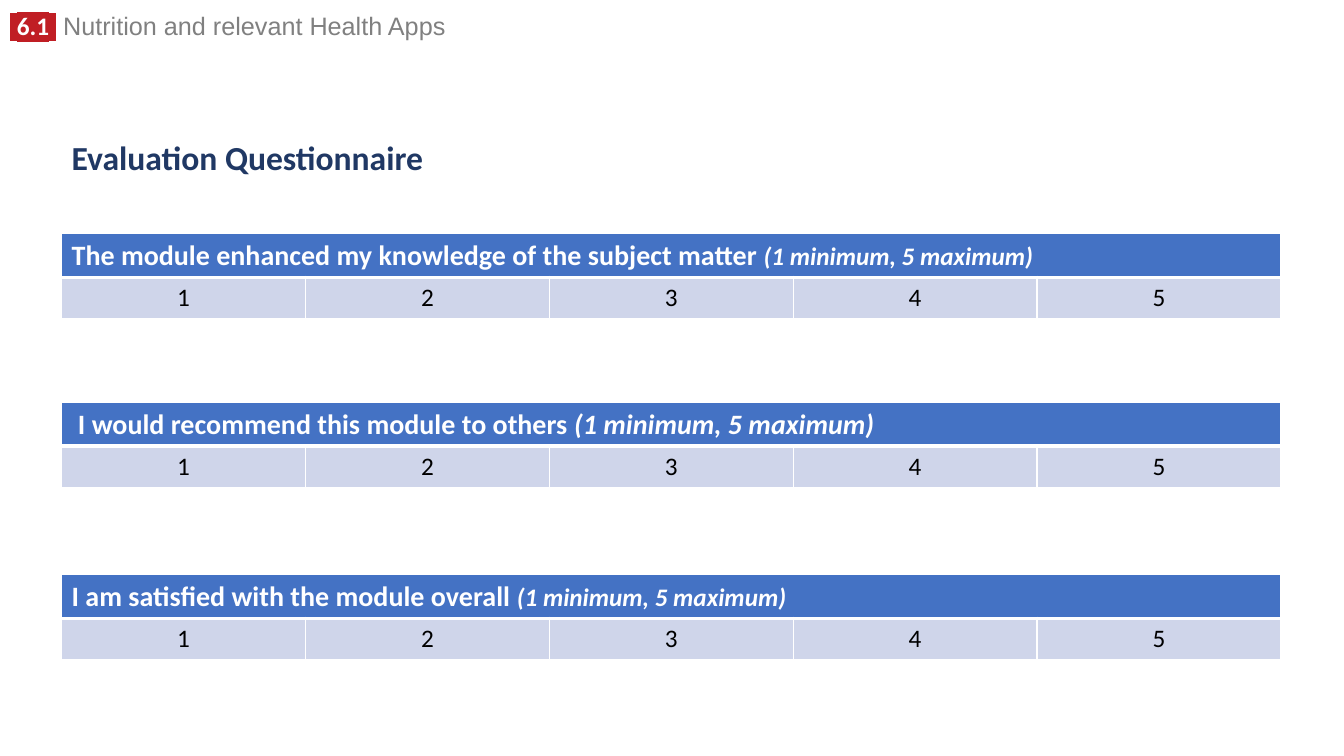
"""Build the evaluation questionnaire slide of the nutrition apps module."""
from dataclasses import dataclass
from typing import Any

from lxml import etree
from pptx import Presentation
from pptx.dml.color import RGBColor
from pptx.enum.text import MSO_ANCHOR, MSO_AUTO_SIZE, PP_ALIGN
from pptx.oxml.ns import qn
from pptx.util import Pt

LEFT, CENTER = PP_ALIGN.LEFT, PP_ALIGN.CENTER
TOP, MIDDLE = MSO_ANCHOR.TOP, MSO_ANCHOR.MIDDLE
FIXED = MSO_AUTO_SIZE.NONE
TITLE_ONLY_LAYOUT = 5


@dataclass(frozen=True)
class Theme:
    white: str = "FFFFFF"
    black: str = "000000"
    grey: str = "808080"
    red: str = "C01E24"
    navy: str = "203864"
    blue: str = "4472C4"
    pale_blue: str = "CFD5EA"
    text_font: str = "Calibri"
    header_font: str = "Arial"
    title_size: float = 24
    question_size: float = 20
    text_size: float = 18
    thin_line: float = 1
    thick_line: float = 3


THEME = Theme()


@dataclass(frozen=True)
class TextRun:
    text: str
    color: str
    size: float = THEME.text_size
    font: str = THEME.text_font
    bold: bool = False
    italic: bool = False
    highlight: str = ""


@dataclass(frozen=True)
class Question:
    text: str
    top: float
    scale_size: float = THEME.text_size


SLIDE_WIDTH, SLIDE_HEIGHT = 960, 540
CONTENT_LEFT, CONTENT_WIDTH = 44, 871
ROW_HEIGHTS = (31, 29.5)
RATINGS = ("1", "2", "3", "4", "5")
SCALE_HINT = "(1 minimum, 5 maximum)"
HEADER_RUNS = (
    TextRun(" ", THEME.white, font=THEME.header_font, bold=True, highlight=THEME.red),
    TextRun("6.1", THEME.white, bold=True, highlight=THEME.red),
    TextRun(" ", THEME.white, font=THEME.header_font, bold=True, highlight=THEME.red),
    TextRun(" Nutrition and relevant Health Apps", THEME.grey, font=THEME.header_font),
)
TITLE_RUN = TextRun("Evaluation Questionnaire", THEME.navy, THEME.title_size, bold=True)
QUESTIONS = (
    Question("The module enhanced my knowledge of the subject matter ", 167),
    Question(" I would recommend this module to others ", 287.5, THEME.question_size),
    Question("I am satisfied with the module overall ", 410.5),
)


def set_attributes(target: Any, values: dict[str, Any]) -> None:
    """Set each named attribute on the target."""
    for name, value in values.items():
        setattr(target, name, value)


def add_run(paragraph: Any, text_run: TextRun) -> None:
    """Append one formatted run to a paragraph."""
    run = paragraph.add_run()
    run.text = text_run.text
    run.font.color.rgb = RGBColor.from_string(text_run.color)
    if text_run.highlight:
        highlight = etree.SubElement(run.font._element, qn("a:highlight"))
        etree.SubElement(highlight, qn("a:srgbClr"), val=text_run.highlight)
    set_attributes(run.font, {
        "name": text_run.font,
        "size": Pt(text_run.size),
        "bold": text_run.bold,
        "italic": text_run.italic,
    })


def add_header(slide: Any) -> None:
    """Add the module number and name at the top of the slide."""
    shape = slide.shapes.add_textbox(Pt(0), Pt(8), Pt(685), Pt(25))
    set_attributes(shape.text_frame, {"word_wrap": True, "vertical_anchor": TOP})
    paragraph = shape.text_frame.paragraphs[0]
    paragraph.line_spacing = 0.8
    for text_run in HEADER_RUNS:
        add_run(paragraph, text_run)


def fill_title(slide: Any) -> None:
    """Place and format the slide title."""
    title = slide.shapes.title
    set_attributes(title, {
        "left": Pt(CONTENT_LEFT),
        "top": Pt(85),
        "width": Pt(CONTENT_WIDTH),
        "height": Pt(57.5),
    })
    set_attributes(title.text_frame, {
        "word_wrap": True, "vertical_anchor": MIDDLE, "auto_size": FIXED,
    })
    paragraph = title.text_frame.paragraphs[0]
    set_attributes(paragraph, {"alignment": LEFT, "line_spacing": 0.9})
    add_run(paragraph, TITLE_RUN)


def format_cell(cell: Any, fill: str, top_line: float, bottom_line: float) -> None:
    """Give a cell its fill and white borders."""
    cell.fill.solid()
    cell.fill.fore_color.rgb = RGBColor.from_string(fill)
    thin = THEME.thin_line
    borders = {"a:lnL": thin, "a:lnR": thin, "a:lnT": top_line, "a:lnB": bottom_line}
    properties = cell._tc.get_or_add_tcPr()
    for position, (tag, width) in enumerate(borders.items()):
        line = etree.Element(qn(tag), w=str(Pt(width)))
        line_fill = etree.SubElement(line, qn("a:solidFill"))
        etree.SubElement(line_fill, qn("a:srgbClr"), val=THEME.white)
        properties.insert(position, line)


def add_question(slide: Any, question: Question) -> None:
    """Add a question with its rating scale as a table."""
    table = slide.shapes.add_table(
        len(ROW_HEIGHTS), len(RATINGS), Pt(CONTENT_LEFT), Pt(question.top),
        Pt(CONTENT_WIDTH), Pt(sum(ROW_HEIGHTS)),
    ).table
    for row, height in zip(table.rows, ROW_HEIGHTS):
        row.height = Pt(height)
    for column, rating in enumerate(RATINGS):
        format_cell(table.cell(0, column), THEME.blue, THEME.thin_line, THEME.thick_line)
        cell = table.cell(1, column)
        format_cell(cell, THEME.pale_blue, THEME.thick_line, THEME.thin_line)
        paragraph = cell.text_frame.paragraphs[0]
        paragraph.alignment = CENTER
        add_run(paragraph, TextRun(rating, THEME.black))
    heading = table.cell(0, 0)
    heading.merge(table.cell(0, len(RATINGS) - 1))
    paragraph = heading.text_frame.paragraphs[0]
    add_run(paragraph, TextRun(question.text, THEME.white, THEME.question_size, bold=True))
    add_run(paragraph, TextRun(
        SCALE_HINT, THEME.white, question.scale_size, bold=True, italic=True,
    ))


def main() -> None:
    """Build and save the presentation."""
    presentation = Presentation()
    set_attributes(presentation, {
        "slide_width": Pt(SLIDE_WIDTH), "slide_height": Pt(SLIDE_HEIGHT),
    })
    slide = presentation.slides.add_slide(presentation.slide_layouts[TITLE_ONLY_LAYOUT])
    add_header(slide)
    fill_title(slide)
    for question in QUESTIONS:
        add_question(slide, question)
    presentation.save("out.pptx")


if __name__ == "__main__":
    main()
